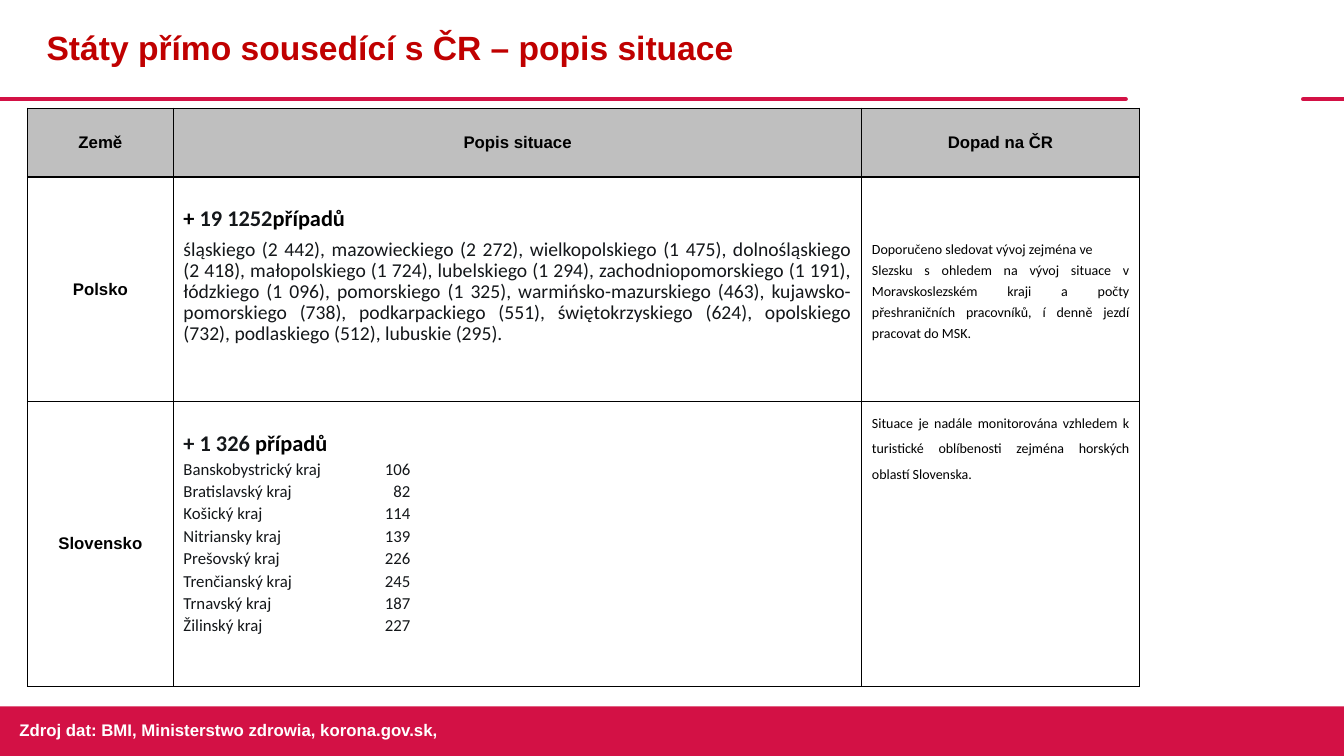
from lxml.etree import SubElement
from pptx import Presentation
from pptx.dml.color import RGBColor
from pptx.enum.shapes import MSO_CONNECTOR, MSO_SHAPE
from pptx.enum.text import MSO_ANCHOR, MSO_AUTO_SIZE, PP_ALIGN
from pptx.oxml.ns import qn
from pptx.util import Cm, Pt

COLORS = {"crimson": "D31145", "title": "C00000", "header": "BFBFBF",
          "white": "FFFFFF", "black": "000000", "ink": "14171A"}
WIDTH, HEIGHT = 33.87, 19.05
COLUMNS = (3.68, 17.35, 6.99)
ROWS = (1.73, 5.66, 7.18)
HEADINGS = ("Země", "Popis situace", "Dopad na ČR")
POLISH_CASES = (
    "śląskiego (2 442), mazowieckiego (2 272), wielkopolskiego (1 475), "
    "dolnośląskiego (2 418), małopolskiego (1 724), lubelskiego (1 294), "
    "zachodniopomorskiego (1 191), łódzkiego (1 096), pomorskiego (1 325), "
    "warmińsko-mazurskiego (463), kujawsko-pomorskiego (738), "
    "podkarpackiego (551), świętokrzyskiego (624), opolskiego (732), "
    "podlaskiego (512), lubuskie (295).")
POLISH_IMPACT = (
    "Doporučeno sledovat vývoj zejména ve",
    "Slezsku s ohledem na vývoj situace v Moravskoslezském kraji a počty "
    "přeshraničních pracovníků, í denně jezdí pracovat do MSK.")
SLOVAK_CASES = (
    ("Banskobystrický", 106), ("Bratislavský", 82), ("Košický", 114),
    ("Nitriansky", 139), ("Prešovský", 226), ("Trenčianský", 245),
    ("Trnavský", 187), ("Žilinský", 227))
SLOVAK_IMPACT = (
    "Situace je nadále monitorována vzhledem k turistické oblíbenosti "
    "zejména horských oblastí Slovenska.")


def color(name):
    return RGBColor.from_string(COLORS[name])


class SlideBuilder:
    def __init__(self, page):
        self.page = page

    def style(self, span, size, ink="black", bold=False, face="Calibri"):
        span.font.name, span.font.size, span.font.bold = face, Pt(size), bold
        span.font.color.rgb = color(ink)

    def title(self, text, left, top, width, height):
        box = self.page.shapes.title
        box.left, box.top, box.width, box.height = map(Cm, (left, top, width, height))
        frame = box.text_frame
        frame.text = text
        frame.word_wrap = True
        frame.auto_size = MSO_AUTO_SIZE.NONE
        frame.vertical_anchor = MSO_ANCHOR.MIDDLE
        para = frame.paragraphs[0]
        para.alignment, para.line_spacing = PP_ALIGN.LEFT, 0.9
        self.style(para.runs[0], 24, "title", True, "Arial")

    def rule(self, start, end, height):
        line = self.page.shapes.add_connector(
            MSO_CONNECTOR.STRAIGHT, Cm(start), Cm(height), Cm(end), Cm(height))
        line.line.color.rgb = color("crimson")
        line.line.width = Pt(3)
        line.line._get_or_add_ln().set("cap", "rnd")
        SubElement(line._element.spPr, qn("a:effectLst"))

    def band(self, top):
        bar = self.page.shapes.add_shape(
            MSO_SHAPE.RECTANGLE, 0, Cm(top), Cm(WIDTH), Cm(HEIGHT - top))
        bar.shadow.inherit = False
        bar.fill.solid()
        bar.fill.fore_color.rgb = color("crimson")
        bar.line.fill.background()

    def label(self, text, left, top, width, height):
        box = self.page.shapes.add_textbox(*map(Cm, (left, top, width, height)))
        box.text_frame.word_wrap = True
        box.text_frame.text = text
        self.style(box.text_frame.paragraphs[0].runs[0], 12, "white", True, "Arial")

    def table(self, left, top):
        grid = self.page.shapes.add_table(
            len(ROWS), len(COLUMNS), Cm(left), Cm(top),
            Cm(sum(COLUMNS)), Cm(sum(ROWS))).table
        grid.first_row = grid.horz_banding = False
        for column, width in zip(grid.columns, COLUMNS):
            column.width = Cm(width)
        for row, height in zip(grid.rows, ROWS):
            row.height = Cm(height)
        for index, cell in enumerate(grid.iter_cells()):
            self.border(cell)
            cell.fill.solid()
            cell.fill.fore_color.rgb = color(
                "header" if index < len(COLUMNS) else "white")
        return grid

    def border(self, cell):
        properties = cell._tc.get_or_add_tcPr()
        for side in "LRTB":
            line = SubElement(properties, qn(f"a:ln{side}"), w=str(Pt(1)))
            fill = SubElement(line, qn("a:solidFill"))
            SubElement(fill, qn("a:srgbClr"), val=COLORS["black"])

    def heading_cell(self, cell, text):
        cell.text = text
        cell.vertical_anchor = MSO_ANCHOR.MIDDLE
        para = cell.text_frame.paragraphs[0]
        para.alignment = PP_ALIGN.CENTER
        self.style(para.runs[0], 12, bold=True, face="Arial")

    def case_count(self, cell, spans):
        """Start a description cell with its bold count of cases."""
        cell.margin_top = Cm(0.87)
        para = cell.text_frame.paragraphs[0]
        para.line_spacing, para.space_after = Pt(15), Pt(6)
        for text, ink in spans:
            span = para.add_run()
            span.text = text
            self.style(span, 16, ink, True)

    def prose(self, para, text, size, spacing, ink="black"):
        para.text = text
        para.alignment, para.line_spacing = PP_ALIGN.JUSTIFY, spacing
        self.style(para.runs[0], size, ink)

    def region(self, para, name, count):
        """Write a region with its count at a right-aligned tab."""
        tabs = SubElement(para._p.get_or_add_pPr(), qn("a:tabLst"))
        SubElement(tabs, qn("a:tab"), pos=str(Cm(5.72)), algn="r")
        para.text = f"{name} kraj\t{count}"
        para.line_spacing, para.space_after = Pt(10), Pt(6)
        for span in para.runs:
            self.style(span, 12, "ink")


def main():
    deck = Presentation()
    deck.slide_width, deck.slide_height = Cm(WIDTH), Cm(HEIGHT)
    page = deck.slides.add_slide(deck.slide_layouts[5])
    builder = SlideBuilder(page)
    builder.rule(0, 28.37, 2.5)
    builder.rule(32.84, WIDTH, 2.5)
    builder.band(17.8)
    builder.title("Státy přímo sousedící s ČR – popis situace", 0.92, 0, 27.46, 2.48)
    builder.label("Zdroj dat: BMI, Ministerstwo zdrowia, korona.gov.sk,",
                  0.24, 18.01, 21.49, 0.76)

    grid = builder.table(0.69, 2.73)
    for column, text in enumerate(HEADINGS):
        builder.heading_cell(grid.cell(0, column), text)
    for row, country in enumerate(("Polsko", "Slovensko"), 1):
        builder.heading_cell(grid.cell(row, 0), country)

    poland = grid.cell(1, 1)
    builder.case_count(poland, [("+", "black"), (" 19 1252", "ink"), ("případů", "black")])
    builder.prose(poland.text_frame.add_paragraph(), POLISH_CASES, 14, Pt(15), "ink")
    impact = grid.cell(1, 2)
    impact.vertical_anchor = MSO_ANCHOR.MIDDLE
    impact.text = "\n".join(POLISH_IMPACT)
    for para, text in zip(impact.text_frame.paragraphs, POLISH_IMPACT):
        builder.prose(para, text, 10, Pt(15))

    slovakia = grid.cell(2, 1)
    builder.case_count(slovakia, [("+ 1 326 ", "ink"), ("případů", "black")])
    for name, count in SLOVAK_CASES:
        builder.region(slovakia.text_frame.add_paragraph(), name, count)
    builder.prose(grid.cell(2, 2).text_frame.paragraphs[0], SLOVAK_IMPACT, 10, 1.5)
    deck.save("out.pptx")


if __name__ == "__main__":
    main()
